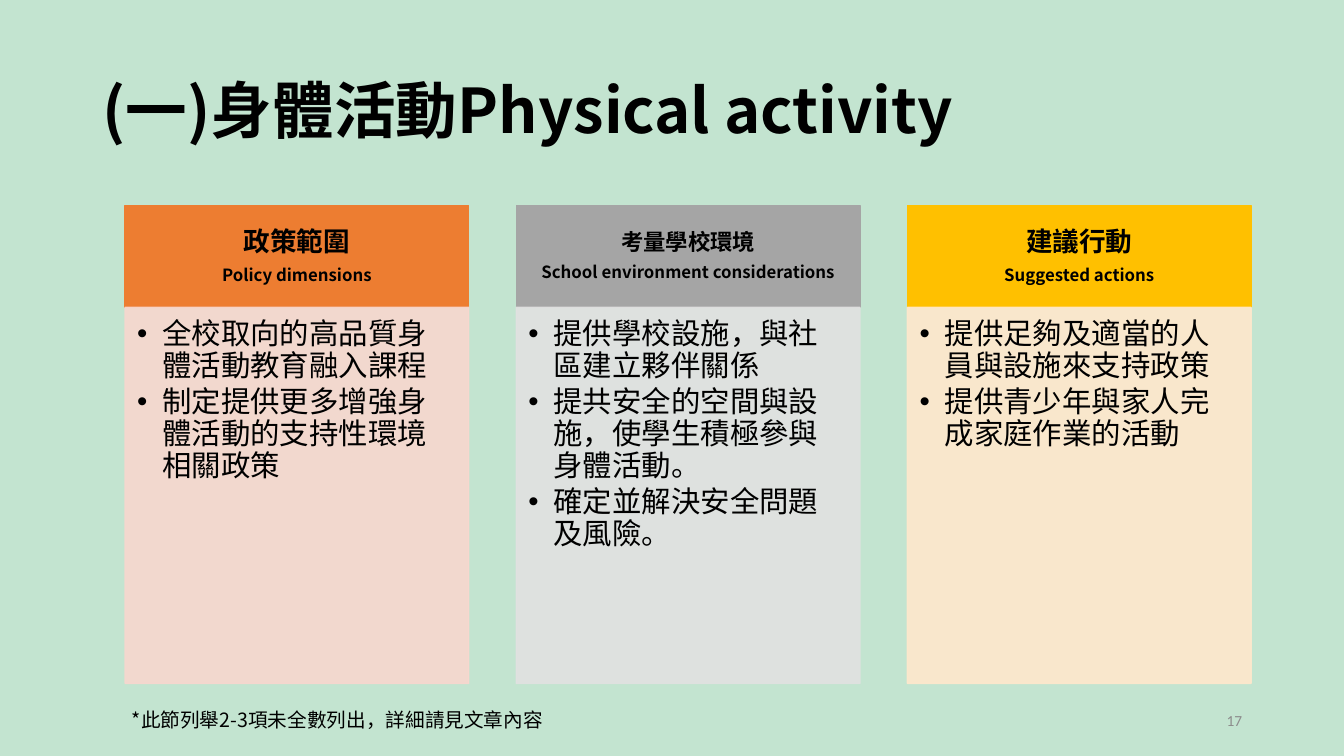
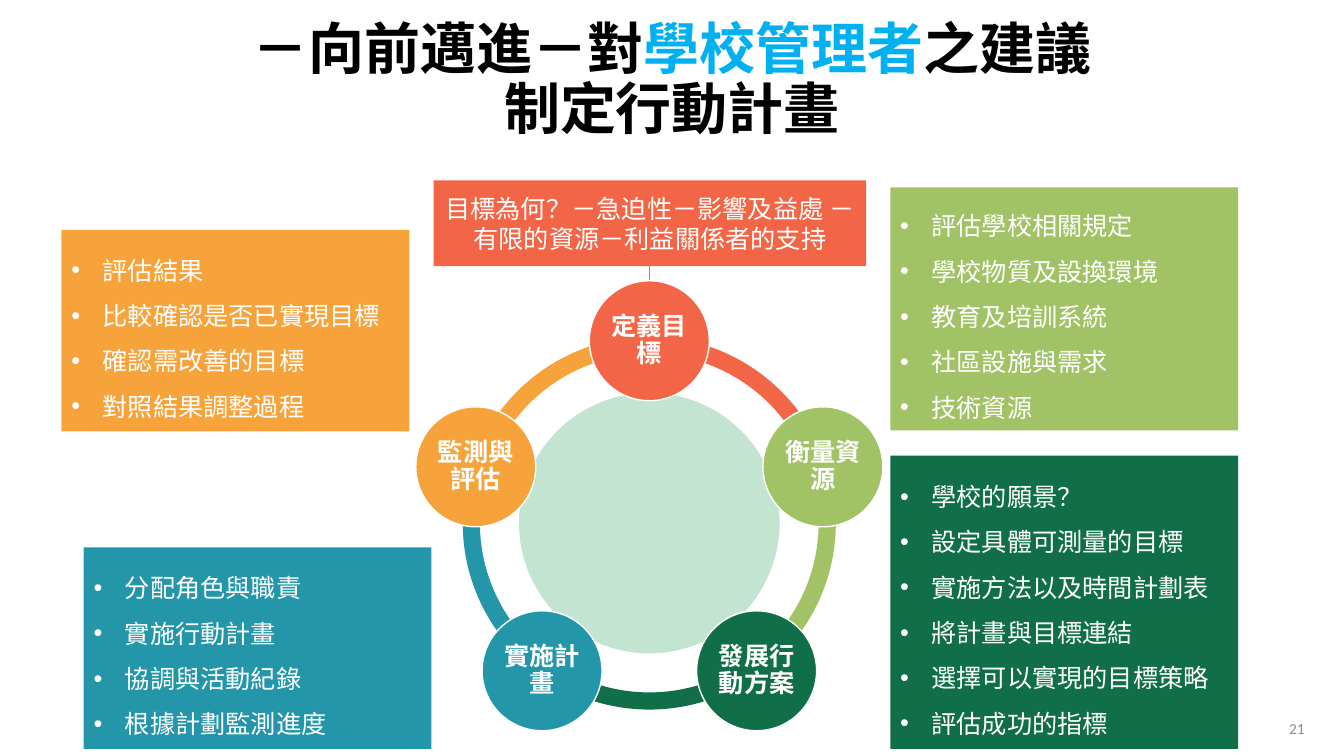
from math import cos, radians, sin

from lxml.etree import SubElement
from pptx import Presentation
from pptx.dml.color import RGBColor
from pptx.enum.shapes import MSO_CONNECTOR, MSO_SHAPE
from pptx.enum.text import MSO_ANCHOR, PP_ALIGN
from pptx.oxml.ns import qn
from pptx.util import Inches, Pt

SLIDE_W, SLIDE_H = 13.33, 7.5
CJK, LATIN = "Noto Sans CJK SC", "Calibri"

BLACK = RGBColor(0x00, 0x00, 0x00)
WHITE = RGBColor(0xFF, 0xFF, 0xFF)
GRAY = RGBColor(0x8C, 0x8C, 0x8C)
SKY = RGBColor(0x00, 0xB0, 0xF0)
MINT = RGBColor(0xC3, 0xE4, 0xD0)
ORANGE = RGBColor(0xED, 0x7D, 0x31)
SILVER = RGBColor(0xA5, 0xA5, 0xA5)
GOLD = RGBColor(0xFF, 0xC0, 0x00)
PALE_ORANGE = RGBColor(0xF8, 0xD7, 0xCE)
PALE_SILVER = RGBColor(0xE1, 0xE1, 0xE1)
PALE_GOLD = RGBColor(0xFF, 0xE8, 0xCC)
CORAL = RGBColor(0xF2, 0x66, 0x47)
LIME = RGBColor(0xA1, 0xC3, 0x65)
FOREST = RGBColor(0x10, 0x6F, 0x49)
TEAL = RGBColor(0x23, 0x96, 0xAA)
AMBER = RGBColor(0xF7, 0xA3, 0x3B)

# Paragraph formats
CENTER = {"alignment": PP_ALIGN.CENTER}
TIGHT = {"line_spacing": 0.9}
LOOSE = {"line_spacing": 1.5}

# Each column: heading, heading size, translation, header and body colours, points
POLICY_COLUMNS = [
    ("政策範圍", 19, "Policy dimensions", ORANGE, PALE_ORANGE,
     ["全校取向的高品質身體活動教育融入課程",
      "制定提供更多增強身體活動的支持性環境相關政策"]),
    ("考量學校環境", 16, "School environment considerations", SILVER, PALE_SILVER,
     ["提供學校設施，與社區建立夥伴關係",
      "提共安全的空間與設施，使學生積極參與身體活動。",
      "確定並解決安全問題及風險。"]),
    ("建議行動", 19, "Suggested actions", GOLD, PALE_GOLD,
     ["提供足夠及適當的人員與設施來支持政策",
      "提供青少年與家人完成家庭作業的活動"]),
]

# Steps run clockwise from the top
STEPS = [("定義目標", CORAL), ("衡量資源", LIME), ("發展行動方案", FOREST),
         ("實施計畫", TEAL), ("監測與評估", AMBER)]

STEP_DETAILS = [
    ((8.83, 1.86, 3.45, 2.41), LIME,
     ["評估學校相關規定", "學校物質及設換環境", "教育及培訓系統",
      "社區設施與需求", "技術資源"]),
    ((8.83, 4.52, 3.45, 2.91), FOREST,
     ["學校的願景？", "設定具體可測量的目標", "實施方法以及時間計劃表",
      "將計畫與目標連結", "選擇可以實現的目標策略", "評估成功的指標"]),
    ((0.61, 2.28, 3.45, 2), AMBER,
     ["評估結果", "比較確認是否已實現目標", "確認需改善的目標", "對照結果調整過程"]),
    ((0.83, 5.43, 3.45, 2), TEAL,
     ["分配角色與職責", "實施行動計畫", "協調與活動紀錄", "根據計劃監測進度"]),
]


def inches(box):
    return [Inches(length) for length in box]


def apply(target, formats):
    for name, value in formats.items():
        setattr(target, name, value)


def setup_frame(shape, insets=(0.1, 0.05, 0.1, 0.05), anchor=MSO_ANCHOR.MIDDLE):
    left, top, right, bottom = inches(insets)
    apply(shape.text_frame, {
        "word_wrap": True, "vertical_anchor": anchor, "margin_left": left,
        "margin_top": top, "margin_right": right, "margin_bottom": bottom})
    return shape.text_frame


def add_paragraph(frame, formats=None, bullet_indent=None):
    first = frame.paragraphs[0]
    paragraph = frame.add_paragraph() if first.runs else first
    if bullet_indent:
        properties = paragraph._p.get_or_add_pPr()
        properties.set("marL", str(Inches(bullet_indent)))
        properties.set("indent", str(-Inches(bullet_indent)))
        SubElement(properties, qn("a:buFont")).set("typeface", "Arial")
        SubElement(properties, qn("a:buChar")).set("char", "•")
    apply(paragraph, {"alignment": PP_ALIGN.LEFT, **(formats or {})})
    return paragraph


def add_run(paragraph, text, size, color=BLACK, bold=False, font=CJK):
    run = paragraph.add_run()
    run.text = text
    apply(run.font, {"name": font, "size": Pt(size), "bold": bold})
    run.font.color.rgb = color
    east_asian = SubElement(run._r.rPr, qn("a:ea"))
    east_asian.set("typeface", font)


def add_bullets(frame, points, size, color, indent, formats):
    for point in points:
        add_run(add_paragraph(frame, formats, indent), point, size, color)


def add_textbox(slide, box, **frame_options):
    return setup_frame(slide.shapes.add_textbox(*inches(box)), **frame_options)


def add_filled(slide, kind, box, fill, line=None, opacity=None):
    shape = slide.shapes.add_shape(kind, *inches(box))
    shape.shadow.inherit = False
    shape.fill.solid()
    shape.fill.fore_color.rgb = fill
    if line is None:
        shape.line.fill.background()
    else:
        shape.line.color.rgb = line
        shape.line.width = Pt(1)
    if opacity:
        for color in shape._element.spPr.iter(qn("a:srgbClr")):
            SubElement(color, qn("a:alpha")).set("val", str(opacity * 1000))
    return shape


def new_slide(deck, background, number, number_left, number_top):
    slide = deck.slides.add_slide(deck.slide_layouts[6])
    slide.background.fill.solid()
    slide.background.fill.fore_color.rgb = background
    frame = add_textbox(slide, (number_left, number_top, 3, 0.4))
    paragraph = add_paragraph(frame, {"alignment": PP_ALIGN.RIGHT})
    add_run(paragraph, number, 11, GRAY, font=LATIN)
    return slide


def add_title(slide, box, lines, size, formats):
    paragraph = add_paragraph(add_textbox(slide, box), {**TIGHT, **formats})
    for index, parts in enumerate(lines):
        if index:
            paragraph.add_line_break()
        for text, color in parts:
            add_run(paragraph, text, size, color, bold=True)


def policy_column(slide, box, column):
    heading, heading_size, translation, header_fill, body_fill, points = column
    left, top, width, height = box
    header_height = 1.01

    # Header band
    header = add_filled(slide, MSO_SHAPE.RECTANGLE, (left, top, width, header_height),
                        header_fill, header_fill)
    frame = setup_frame(header, (0.12, 0.07, 0.12, 0.07))
    for text, size in ((heading, heading_size), (translation, 12)):
        spacing = {**CENTER, **TIGHT, "space_after": Pt(size * 0.35)}
        add_run(add_paragraph(frame, spacing), text, size, bold=True)

    # Body panel
    body = add_filled(slide, MSO_SHAPE.RECTANGLE,
                      (left, top + header_height, width, height - header_height),
                      body_fill, body_fill, opacity=90)
    frame = setup_frame(body, (0.12, 0.12, 0.16, 0.18), MSO_ANCHOR.TOP)
    add_bullets(frame, points, 21, BLACK, 0.25, {**TIGHT, "space_after": Pt(3.15)})


def activity_slide(deck):
    slide = new_slide(deck, MINT, "17", 9.42, 6.95)
    add_title(slide, (0.92, 0.4, 11.5, 1.45),
              [[("(一)身體活動Physical activity", BLACK)]], 44, {})

    # Three equal columns
    left, top, width, height, gap = 1.24, 2.04, 3.41, 4.74, 0.47
    for index, column in enumerate(POLICY_COLUMNS):
        policy_column(slide, (left + index * (width + gap), top, width, height), column)

    # Footnote
    note = add_textbox(slide, (1.21, 6.97, 4.33, 0.34), anchor=MSO_ANCHOR.TOP)
    add_run(add_paragraph(note), "*此節列舉2-3項未全數列出，詳細請見文章內容", 14)


def step_cycle(slide, box):
    left, top, size, _ = box
    center_x, center_y = left + size / 2, top + size / 2
    orbit, node, hub = 1.81, 1.19, 2.6
    turn = 360 / len(STEPS)
    angles = [270 + index * turn for index in range(len(STEPS))]

    # Ring segments, each in the colour of the step it leaves
    for angle, (_, color) in zip(angles, STEPS):
        arc = add_filled(slide, MSO_SHAPE.BLOCK_ARC, box, color)
        for index, value in enumerate((angle % 360 * 0.6,
                                       (angle + turn) % 360 * 0.6, 0.046)):
            arc.adjustments[index] = value

    # Hub
    add_filled(slide, MSO_SHAPE.OVAL,
               (center_x - hub / 2, center_y - hub / 2, hub, hub), MINT, WHITE)

    # Step nodes
    for angle, (label, color) in zip(angles, STEPS):
        x = center_x + orbit * cos(radians(angle)) - node / 2
        y = center_y + orbit * sin(radians(angle)) - node / 2
        circle = add_filled(slide, MSO_SHAPE.OVAL, (x, y, node, node), color, WHITE)
        frame = setup_frame(circle, (0.03,) * 4)
        spacing = {**CENTER, **TIGHT, "space_after": Pt(6.3)}
        add_run(add_paragraph(frame, spacing), label, 18, WHITE, bold=True)


def goal_callout(slide, box, stem_x, stem_end):
    left, top, width, height = box
    goal = add_filled(slide, MSO_SHAPE.RECTANGLE, box, CORAL)
    add_run(add_paragraph(setup_frame(goal), CENTER),
            "目標為何？－急迫性－影響及益處 －有限的資源－利益關係者的支持", 18, WHITE)
    stem = slide.shapes.add_connector(
        MSO_CONNECTOR.STRAIGHT, *inches((stem_x, top + height, stem_x, stem_end)))
    stem.line.color.rgb = CORAL
    stem.line.width = Pt(0.5)
    SubElement(stem._element.spPr, qn("a:effectLst"))


def detail_box(slide, box, color, points):
    panel = add_filled(slide, MSO_SHAPE.RECTANGLE, box, color)
    add_bullets(setup_frame(panel), points, 18, WHITE, 0.31, LOOSE)


def action_plan_slide(deck):
    slide = new_slide(deck, WHITE, "21", 10.04, 7.03)
    goal_callout(slide, (4.3, 1.79, 4.29, 0.85), 6.44, 2.78)
    step_cycle(slide, (4.59, 3.34, 3.7, 3.7))
    for box, color, points in STEP_DETAILS:
        detail_box(slide, box, color, points)
    add_title(slide, (0, 0.08, SLIDE_W, 1.45),
              [[("－向前邁進－對", BLACK), ("學校管理者", SKY), ("之建議", BLACK)],
               [("制定行動計畫", BLACK)]], 40, CENTER)


def main():
    deck = Presentation()
    deck.slide_width, deck.slide_height = inches((SLIDE_W, SLIDE_H))
    activity_slide(deck)
    action_plan_slide(deck)
    deck.save("out.pptx")


if __name__ == "__main__":
    main()
